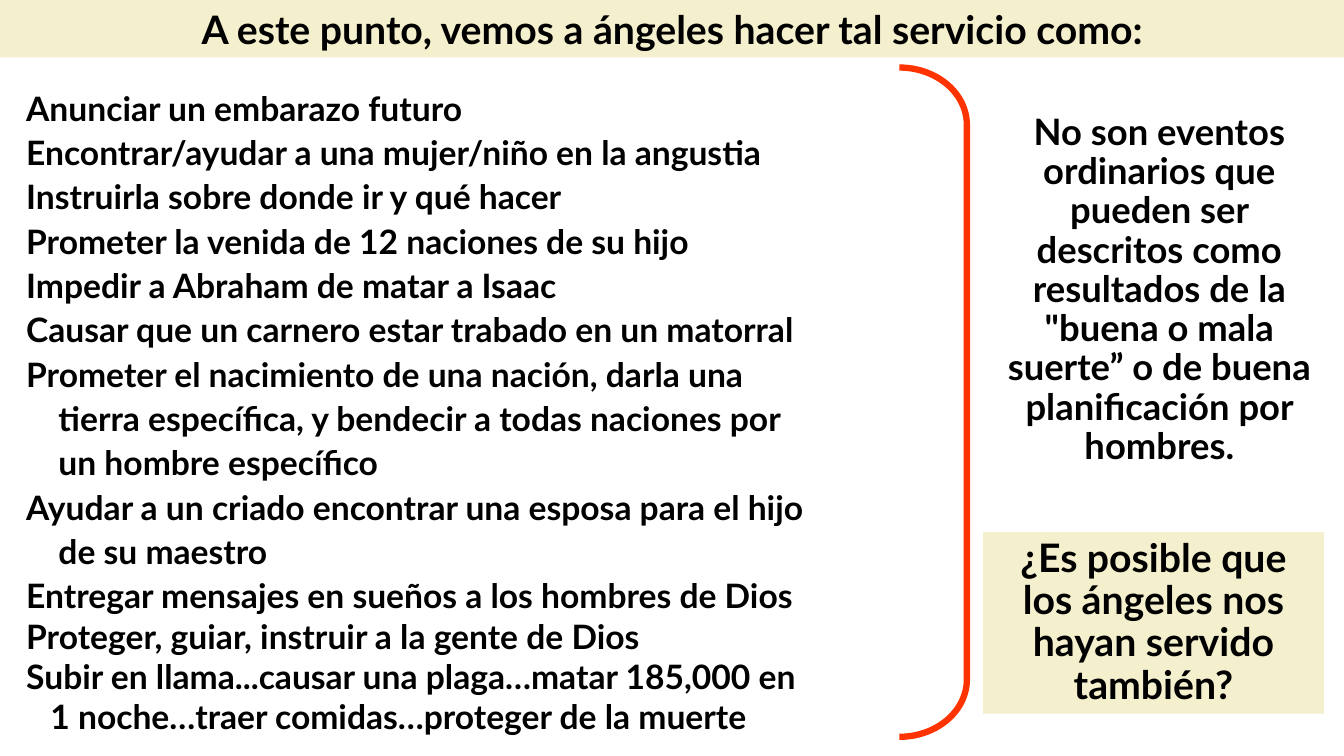
from dataclasses import dataclass

import lxml.etree
import pptx
import pptx.dml.color
import pptx.enum.shapes
import pptx.enum.text
import pptx.oxml.ns
import pptx.util

Inches = pptx.util.Inches
COLOURS = {"text": "000000", "panel": "F4EFCC", "bracket": "FF3300"}
FONT = "Lato"


@dataclass
class Item:
    text: str
    indent: float = 0
    spacing: float = 1.1


@dataclass
class Block:
    items: list[Item]
    left: float
    top: float
    width: float
    height: float
    size: float
    centred: bool = True
    middle: bool = False
    filled: bool = False


TITLE = Block(
    [Item("A este punto, vemos a ángeles hacer tal servicio como:", spacing=1.0)],
    0, 0, 13.33, 0.57, 28, middle=True, filled=True)
SERVICES = Block([
    Item("Anunciar un embarazo futuro"),
    Item("Encontrar/ayudar a una mujer/niño en la angustia"),
    Item("Instruirla sobre donde ir y qué hacer"),
    Item("Prometer la venida de 12 naciones de su hijo"),
    Item("Impedir a Abraham de matar a Isaac"),
    Item("Causar que un carnero estar trabado en un matorral"),
    Item("Prometer el nacimiento de una nación, darla una"),
    Item("tierra específica, y bendecir a todas naciones por", 0.32),
    Item("un hombre específico", 0.32),
    Item("Ayudar a un criado encontrar una esposa para el hijo"),
    Item("de su maestro", 0.32),
    Item("Entregar mensajes en sueños a los hombres de Dios"),
    Item("Proteger, guiar, instruir a la gente de Dios", spacing=1.0),
    Item("Subir en llama...causar una plaga…matar 185,000 en", spacing=1.0),
    Item("1 noche…traer comidas…proteger de la muerte", 0.24, 1.0),
], 0.16, 0.78, 9.59, 6.64, 24, centred=False)
QUESTION = Block(
    [Item("¿Es posible que los ángeles nos hayan servido también?", spacing=0.9)],
    9.75, 5.28, 3.38, 1.8, 28, middle=True, filled=True)
CONCLUSION = Block(
    [Item("No son eventos ordinarios que pueden ser descritos como resultados "
          "de la \"buena o mala suerte” o de buena planificación por hombres.",
          spacing=0.9)],
    9.75, 1.08, 3.5, 4.04, 26)


def colour(name: str) -> pptx.dml.color.RGBColor:
    return pptx.dml.color.RGBColor.from_string(COLOURS[name])


def place(block: Block) -> tuple:
    return tuple(Inches(v) for v in (block.left, block.top, block.width, block.height))


def fill_block(box, block: Block) -> None:
    """Position a box and write its formatted paragraphs."""
    box.left, box.top, box.width, box.height = place(block)
    if block.filled:
        box.fill.solid()
        box.fill.fore_color.rgb = colour("panel")
    frame = box.text_frame
    frame.word_wrap = True
    frame.auto_size = pptx.enum.text.MSO_AUTO_SIZE.NONE
    anchors = pptx.enum.text.MSO_ANCHOR
    frame.vertical_anchor = anchors.MIDDLE if block.middle else anchors.TOP
    frame.text = "\n".join(item.text for item in block.items)
    aligns = pptx.enum.text.PP_ALIGN
    for para, item in zip(frame.paragraphs, block.items):
        para.alignment = aligns.CENTER if block.centred else aligns.LEFT
        para.line_spacing = item.spacing
        para.space_before = pptx.util.Pt(0)
        # Left indent without a bullet
        properties = para._p.get_or_add_pPr()
        properties.set("marL", str(Inches(item.indent)))
        properties.set("indent", "0")
        lxml.etree.SubElement(properties, pptx.oxml.ns.qn("a:buNone"))
        for span in para.runs:
            span.font.name = FONT
            span.font.size = pptx.util.Pt(block.size)
            span.font.bold = True
            span.font.color.rgb = colour("text")


def add_bracket(page) -> None:
    bracket = page.shapes.add_shape(
        pptx.enum.shapes.MSO_SHAPE.RIGHT_BRACKET,
        Inches(8.92), Inches(0.67), Inches(0.67), Inches(6.64))
    bracket.adjustments[0] = 0.85
    bracket.shadow.inherit = False
    bracket.fill.background()
    bracket.line.color.rgb = colour("bracket")
    bracket.line.width = pptx.util.Pt(4.5)


def main() -> None:
    deck = pptx.Presentation()
    deck.slide_width, deck.slide_height = Inches(13.33), Inches(7.5)
    page = deck.slides.add_slide(deck.slide_layouts[1])

    # Title band and list of services
    fill_block(page.shapes.title, TITLE)
    fill_block(page.placeholders[1], SERVICES)

    # Bracket gathering the list
    add_bracket(page)

    # Question panel and conclusion
    panel = page.shapes.add_shape(
        pptx.enum.shapes.MSO_SHAPE.RECTANGLE, *place(QUESTION))
    panel.shadow.inherit = False
    panel.line.fill.background()
    fill_block(panel, QUESTION)
    fill_block(page.shapes.add_textbox(*place(CONCLUSION)), CONCLUSION)

    deck.save("out.pptx")


if __name__ == "__main__":
    main()
